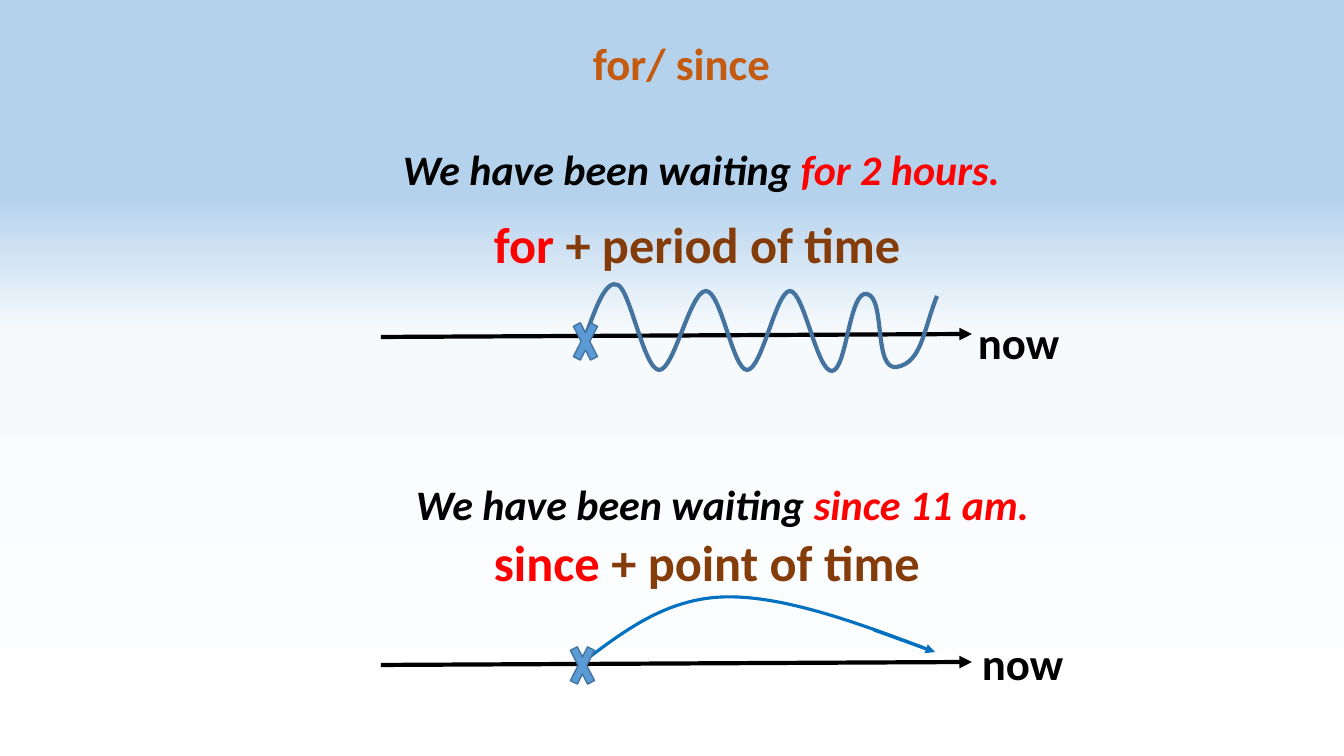
from pptx import Presentation
from pptx.dml.color import RGBColor
from pptx.enum.shapes import MSO_CONNECTOR, MSO_SHAPE
from pptx.enum.text import MSO_AUTO_SIZE
from pptx.oxml.ns import qn
from pptx.util import Pt
from lxml import etree

STRAIGHT = MSO_CONNECTOR.STRAIGHT
CROSS = MSO_SHAPE.MATH_MULTIPLY
FIT = MSO_AUTO_SIZE.SHAPE_TO_FIT_TEXT
EMU = 12192000 / 1344  # one px
HUES = {
    "black": "000000", "red": "FF0000", "brown": "843C0B",
    "orange": "C55A11", "blue": "5B9BD5", "steel": "43739E",
    "arc": "0070C0",
}
SKY = [(0, "B5D2EC"), (26, "B5D2EC"), (44, "F7FAFD"), (100, "FFFFFF")]


def emu(*px):
    return [round(n * EMU) for n in px]


class Board:
    font = "Calibri"

    def __init__(self, deck):
        self.slide = deck.slides.add_slide(deck.slide_layouts[6])
        self.shapes = self.slide.shapes

    def sky(self, stops):
        fill = self.slide.background.fill
        fill.gradient()
        fill.gradient_angle = 270
        ramp = self.slide.element.find(".//" + qn("a:gsLst"))
        for old in list(ramp):
            ramp.remove(old)
        for pos, hue in stops:
            stop = etree.SubElement(ramp, qn("a:gs"), pos=str(pos * 1000))
            etree.SubElement(stop, qn("a:srgbClr"), val=hue)

    def text(self, box, size, parts, italic=False, wrap=False):
        frame = self.shapes.add_textbox(*emu(*box)).text_frame
        frame.word_wrap = wrap
        frame.auto_size = FIT
        for words, hue in parts:
            run = frame.paragraphs[0].add_run()
            run.text = words
            font = run.font
            font.name, font.size = self.font, Pt(size)
            font.bold, font.italic = True, italic
            font.color.rgb = RGBColor.from_string(HUES[hue])

    def pen(self, shape, hue, width):
        shape.line.color.rgb = RGBColor.from_string(HUES[hue])
        shape.line.width = Pt(width)

    def arrow(self, ends, hue, width):
        line = self.shapes.add_connector(STRAIGHT, *emu(*ends))
        self.pen(line, hue, width)
        etree.SubElement(line.line._get_or_add_ln(), qn("a:tailEnd"), type="triangle")
        etree.SubElement(line.element.spPr, qn("a:effectLst"))

    def curve(self, points, hue, width):
        build = self.shapes.build_freeform(*points[0], scale=EMU)
        build.add_line_segments(points[1:], close=False)
        shape = build.convert_to_shape()
        shape.shadow.inherit = False
        shape.fill.background()
        self.pen(shape, hue, width)
        # Every three points make one cubic segment
        track = shape.element.find(".//" + qn("a:path"))
        steps = track.findall(qn("a:lnTo"))
        for i in range(0, len(steps), 3):
            cubic = etree.SubElement(track, qn("a:cubicBezTo"))
            for step in steps[i:i + 3]:
                cubic.append(step[0])
                track.remove(step)

    def cross(self, box):
        shape = self.shapes.add_shape(CROSS, *emu(*box))
        shape.shadow.inherit = False
        shape.fill.solid()
        shape.fill.fore_color.rgb = RGBColor.from_string(HUES["blue"])
        self.pen(shape, "steel", 1)


def main():
    deck = Presentation()
    deck.slide_width, deck.slide_height = emu(1344, 756)
    board = Board(deck)
    board.sky(SKY)

    # Title
    board.text((583, 31, 200, 64), 32, [("for/ since", "orange")])

    # Examples and rules
    lead = ("We have been waiting ", "black")
    board.text((393, 139, 624, 61), 30, [lead, ("for 2 hours.", "red")], True)
    board.text((484, 208, 431, 72), 36,
               [("for", "red"), (" + period of time", "brown")])
    board.text((406, 474, 641, 61), 30, [lead, ("since 11 am.", "red")], True)
    board.text((484, 526, 463, 72), 36,
               [("since", "red"), (" + point of time", "brown")])

    # Time lines
    for y in (337, 665):
        board.arrow((381, y, 972, y - 3), "black", 3)

    # Wave for a period, arc from a point
    board.curve([
        (586, 335), (596, 307), (606, 279), (618, 285),
        (630, 290), (644, 369), (659, 370),
        (674, 371), (690, 291), (706, 291),
        (721, 291), (733, 370), (747, 370),
        (762, 370), (776, 291), (790, 291),
        (804, 291), (817, 372), (832, 371),
        (847, 370), (849, 290), (867, 294),
        (886, 298), (873, 371), (897, 367),
        (922, 362), (923, 331), (937, 296),
    ], "steel", 3)
    board.curve([
        (583, 662), (624, 631), (666, 599), (723, 597),
        (780, 595), (853, 621), (924, 648),
    ], "arc", 2.25)
    board.arrow((874, 630, 935, 652), "arc", 2.25)

    # Start marks and "now" labels
    for x, y in ((566, 633), (569, 309)):
        board.cross((x, y, 33, 65))
    for x, y in ((972, 631), (968, 310)):
        board.text((x, y, 109, 64), 32, [("now", "black")], wrap=True)

    deck.save("out.pptx")


if __name__ == "__main__":
    main()
